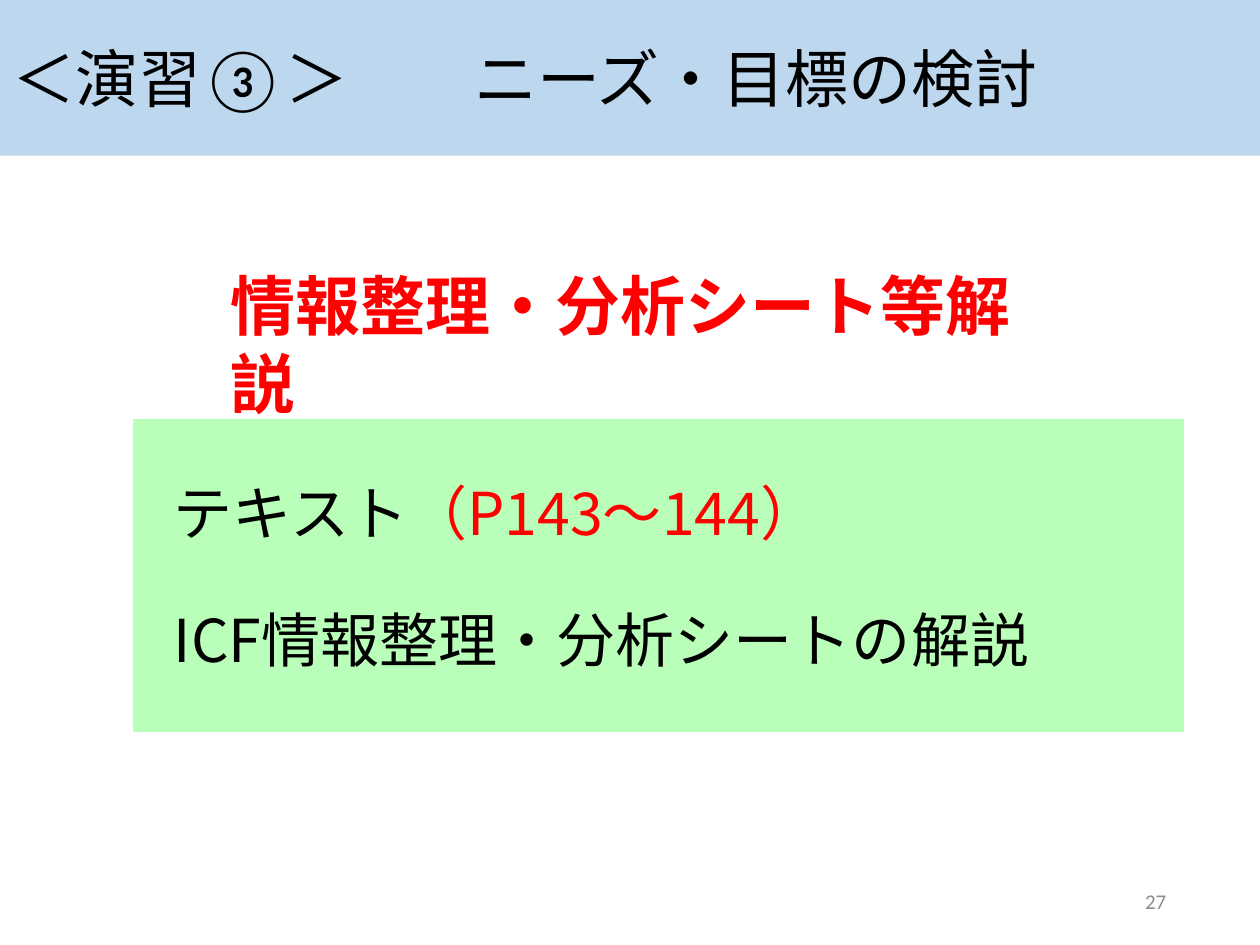
"""Build the slide that introduces the needs and goals exercise."""
from dataclasses import dataclass

import pptx
import pptx.dml.color
import pptx.enum.shapes
import pptx.enum.text
import pptx.oxml.ns
import pptx.util
from lxml import etree

Pt = pptx.util.Pt
RGB = pptx.dml.color.RGBColor.from_string
Align = pptx.enum.text.PP_ALIGN
Anchor = pptx.enum.text.MSO_ANCHOR
qn = pptx.oxml.ns.qn


@dataclass(frozen=True)
class Theme:
    sky: str = "BDD7EE"
    mint: str = "B9FFB9"
    white: str = "FFFFFF"
    black: str = "000000"
    red: str = "FF0000"
    grey: str = "8C8C8C"
    sans: str = "Calibri"
    kanji: str = "Noto Sans CJK JP"
    title: float = 64
    head: float = 66
    body: float = 60
    page: float = 21.3


theme = Theme()


def place(shape, left, top, width, height):
    """Set the position and size of a shape in points."""
    shape.left, shape.top = Pt(left), Pt(top)
    shape.width, shape.height = Pt(width), Pt(height)


def style(para, face, size, color, align=Align.LEFT, bold=False):
    """Set the alignment and font of a paragraph."""
    para.alignment = align
    font = para.font
    font.name, font.size, font.bold = face, Pt(size), bold
    font.color.rgb = RGB(color)


deck = pptx.Presentation()
deck.slide_width, deck.slide_height = Pt(1280), Pt(960)
slide = deck.slides.add_slide(deck.slide_layouts[5])
shapes = slide.shapes

title = shapes.title
place(title, 0, 0, 1280, 158)
title.fill.solid()
title.fill.fore_color.rgb = RGB(theme.sky)
frame = title.text_frame
frame.text = "＜演習③＞　　ニーズ・目標の検討"
frame.auto_size = pptx.enum.text.MSO_AUTO_SIZE.NONE
frame.vertical_anchor = Anchor.MIDDLE
frame.margin_left = frame.margin_right = Pt(13)
frame.margin_top = frame.margin_bottom = Pt(6.5)
style(frame.paragraphs[0], theme.sans, theme.title, theme.black)

labels = [
    ("27", (904, 890, 288, 51), Anchor.MIDDLE,
     (theme.page, theme.grey, Align.RIGHT)),
    ("情報整理・分析シート等解説", (227.5, 266.5, 818, 87), Anchor.TOP,
     (theme.head, theme.red, Align.LEFT, True)),
]
for text, area, anchor, look in labels:
    label = shapes.add_textbox(0, 0, 0, 0)
    place(label, *area)
    frame = label.text_frame
    frame.word_wrap = True
    frame.vertical_anchor = anchor
    frame.text = text
    style(frame.paragraphs[0], theme.sans, *look)

panel = shapes.add_shape(pptx.enum.shapes.MSO_SHAPE.RECTANGLE, 0, 0, 0, 0)
place(panel, 134, 425, 1069, 319)
panel.shadow.inherit = False
panel.fill.solid()
panel.fill.fore_color.rgb = RGB(theme.mint)
panel.line.color.rgb = RGB(theme.white)
panel.line.width = Pt(0.75)
frame = panel.text_frame
frame.word_wrap = True
frame.vertical_anchor = Anchor.MIDDLE
frame.margin_left, frame.margin_right = Pt(42.5), Pt(6)
frame.margin_top, frame.margin_bottom = Pt(2), Pt(1)
frame.text = "テキスト\nICF情報整理・分析シートの解説"
for para in frame.paragraphs:
    style(para, theme.kanji, theme.body, theme.black, Align.JUSTIFY)
first, last = frame.paragraphs
last.space_before = Pt(57)
pages = first.add_run()
pages.text = "（P143～144）"
pages.font.color.rgb = RGB(theme.red)

for shape in shapes:
    for latin in shape.element.iter(qn("a:latin")):
        asian = etree.Element(qn("a:ea"), typeface=latin.get("typeface"))
        latin.addnext(asian)

deck.save("out.pptx")
